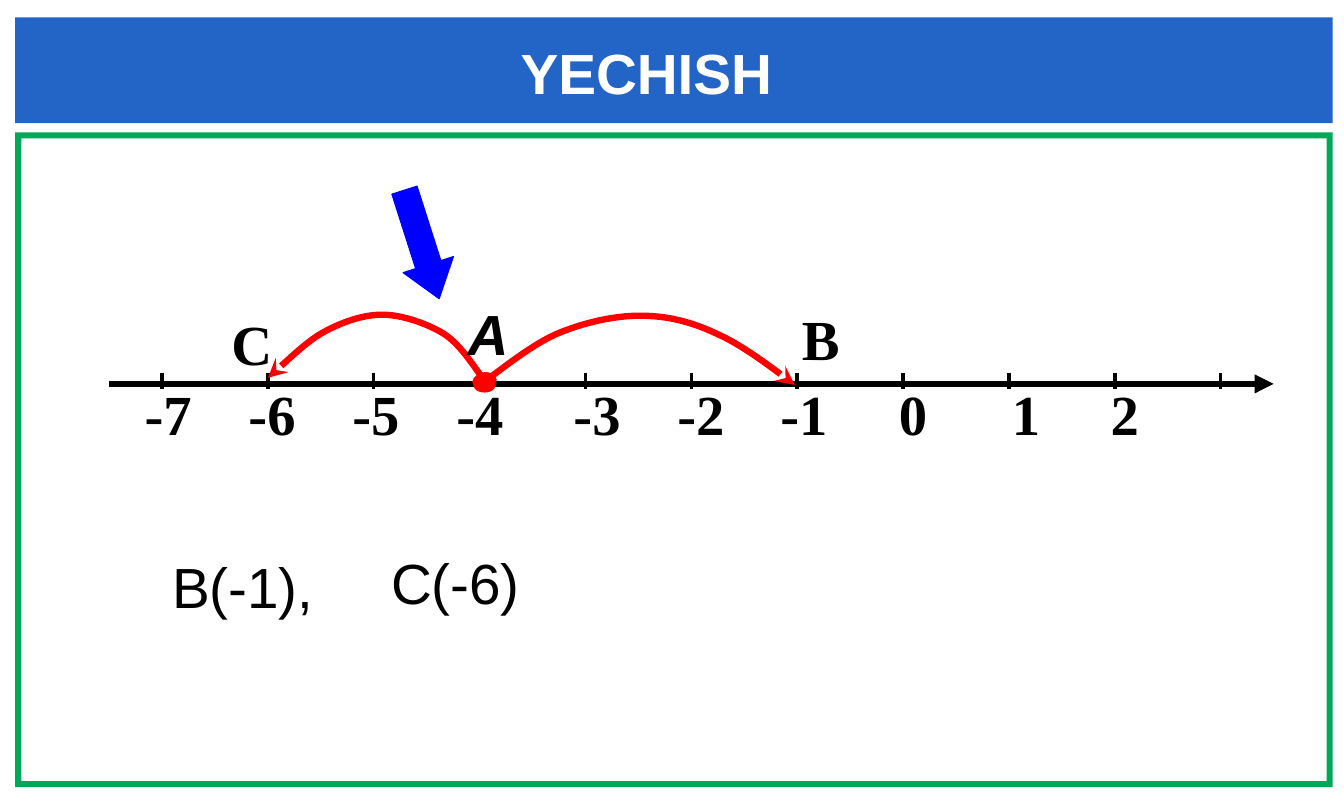
from lxml import etree
from pptx import Presentation, util as u
from pptx.dml.color import RGBColor
from pptx.enum import shapes, text
from pptx.oxml.ns import qn

COLORS = {"blue": "2365C7", "green": "00A859", "arrow": "0000FF",
          "red": "FF0000", "black": "000000", "white": "FFFFFF"}
SERIF, SANS = "Times New Roman", "Arial"
MARGIN, PANEL_WIDTH = 0.15, 12.93
FIRST_TICK, LAST_TICK, AXIS = 1.59, 11.98, 3.77
STEP = (LAST_TICK - FIRST_TICK) / 10
KINDS = shapes.MSO_SHAPE

deck = Presentation()
deck.slide_width, deck.slide_height = u.Inches(13.19), u.Pt(567)
page = deck.slides.add_slide(deck.slide_layouts[5])


def add_block(kind, area, color, outlined=True):
    block = page.shapes.add_shape(kind, *map(u.Inches, area))
    block.shadow.inherit = False
    block.fill.solid()
    block.fill.fore_color.rgb = RGBColor.from_string(COLORS[color])
    if outlined:
        block.line.color.rgb = RGBColor.from_string(COLORS[color])
        block.line.width = u.Pt(0.75)
    else:
        block.line.fill.background()
    return block


def write(box, words, font, color="black", inset=(0.1, 0.05), bold=True, italic=False):
    frame = box.text_frame
    frame.margin_left = frame.margin_right = u.Inches(inset[0])
    frame.margin_top = frame.margin_bottom = u.Inches(inset[1])
    frame.vertical_anchor = text.MSO_ANCHOR.TOP
    frame.auto_size = text.MSO_AUTO_SIZE.NONE
    frame.word_wrap = True
    para = frame.paragraphs[0]
    para.alignment = text.PP_ALIGN.LEFT
    span = para.add_run()
    span.text = words
    span.font.name, span.font.size = font, u.Pt(40)
    span.font.bold, span.font.italic = bold, italic
    span.font.color.rgb = RGBColor.from_string(COLORS[color])
    return para


panel = add_block(KINDS.FRAME, (MARGIN, 1.3, PANEL_WIDTH, 6.43), "green", False)
panel.adjustments[0] = 0.06 / 6.43
banner = add_block(KINDS.RECTANGLE, (MARGIN, 0.17, PANEL_WIDTH, 1.04), "blue", False)

title = page.shapes.title
title.left, title.top, title.width, title.height = map(u.Inches, (5.01, 0.32, 2.69, 0.77))
write(title, "YECHISH", SANS, "white")
banner.element.addnext(title.element)

scale_left = 0.53
scale = add_block(KINDS.RECTANGLE, (scale_left, 3.2, 11.74, 1.25), "white")
centers = [1.65, 2.67, 3.69, 4.71, 5.86, 6.88, 7.89, 8.96, 10.07, 11.04]
numbers = "".join(f"\t{number}" for number in range(-7, 3))
para = write(scale, numbers, SERIF, inset=(0, 0))
scale.text_frame.margin_top = u.Inches(0.52)
stops = etree.SubElement(para._p.get_or_add_pPr(), qn("a:tabLst"))
for center in centers:
    etree.SubElement(stops, qn("a:tab"), pos=str(u.Inches(center - scale_left)), algn="ctr")

pointer = add_block(KINDS.DOWN_ARROW, (3.88, 1.84, 0.52, 1.12), "arrow")
pointer.rotation = 342.3
pointer.adjustments[0], pointer.adjustments[1] = 0.5, 0.677

strokes = [((x, 3.66), (x, 3.82), 2.5, None)
           for x in (FIRST_TICK + STEP * i for i in range(11) if i != 3)]
strokes.append(((1.07, AXIS), (12.5, AXIS), 4.5, "triangle"))
for start, end, weight, head in strokes:
    stroke = page.shapes.add_connector(shapes.MSO_CONNECTOR.STRAIGHT,
                                       *map(u.Inches, start + end))
    stroke.line.color.rgb = RGBColor.from_string(COLORS["black"])
    stroke.line.width = u.Pt(weight)
    if head:
        etree.SubElement(stroke.line._get_or_add_ln(), qn("a:tailEnd"), type=head)
    etree.SubElement(stroke.element.spPr, qn("a:effectLst"))

jumps = [
    [(4.73, 3.7), (4.67, 3.63), (4.53, 3.39), (4.36, 3.28), (4.2, 3.18), (3.95, 3.09),
     (3.75, 3.09), (3.55, 3.09), (3.34, 3.17), (3.16, 3.27), (2.97, 3.38), (2.74, 3.62),
     (2.63, 3.71)],
    [(4.75, 3.75), (4.89, 3.65), (5.21, 3.39), (5.46, 3.28), (5.72, 3.17), (6.02, 3.1),
     (6.28, 3.1), (6.55, 3.1), (6.79, 3.16), (7.04, 3.28), (7.3, 3.39), (7.68, 3.69),
     (7.8, 3.78)],
]
for controls in jumps:
    curve = [controls[0]]
    for first in range(0, len(controls) - 1, 3):
        a, b, c, d = controls[first:first + 4]
        for t in (step / 12 for step in range(1, 13)):
            s = 1 - t
            curve.append(tuple(s**3 * a[k] + 3 * s * s * t * b[k] + 3 * s * t * t * c[k]
                               + t**3 * d[k] for k in (0, 1)))
    dots = [(u.Inches(x), u.Inches(y)) for x, y in curve]
    builder = page.shapes.build_freeform(*dots[0])
    builder.add_line_segments(dots[1:], close=False)
    jump = builder.convert_to_shape()
    jump.shadow.inherit = False
    jump.fill.background()
    jump.line.color.rgb = RGBColor.from_string(COLORS["red"])
    jump.line.width = u.Pt(4.5)
    etree.SubElement(jump.line._get_or_add_ln(), qn("a:tailEnd"), type="stealth")

for left, top in ((4.64, 3.68), (4.65, 3.71), (4.66, 3.66)):
    add_block(KINDS.OVAL, (left, top, 0.21, 0.14), "red")

points = [("B", 7.75, 2.92, 0.62, SERIF, False),
          ("А", 4.47, 2.88, 0.65, SANS, True),
          ("C", 2.15, 2.97, 0.65, SERIF, False)]
for name, left, top, width, font, italic in points:
    box = page.shapes.add_textbox(*map(u.Inches, (left, top, width, 0.79)))
    write(box, name, font, inset=(0.12, 0.06), italic=italic)

for answer, left, top, width in (("B(-1),", 1.59, 5.37, 1.8), ("C(-6)", 3.74, 5.33, 2.25)):
    box = page.shapes.add_textbox(*map(u.Inches, (left, top, width, 0.77)))
    write(box, answer, SANS, bold=False)

deck.save("out.pptx")
